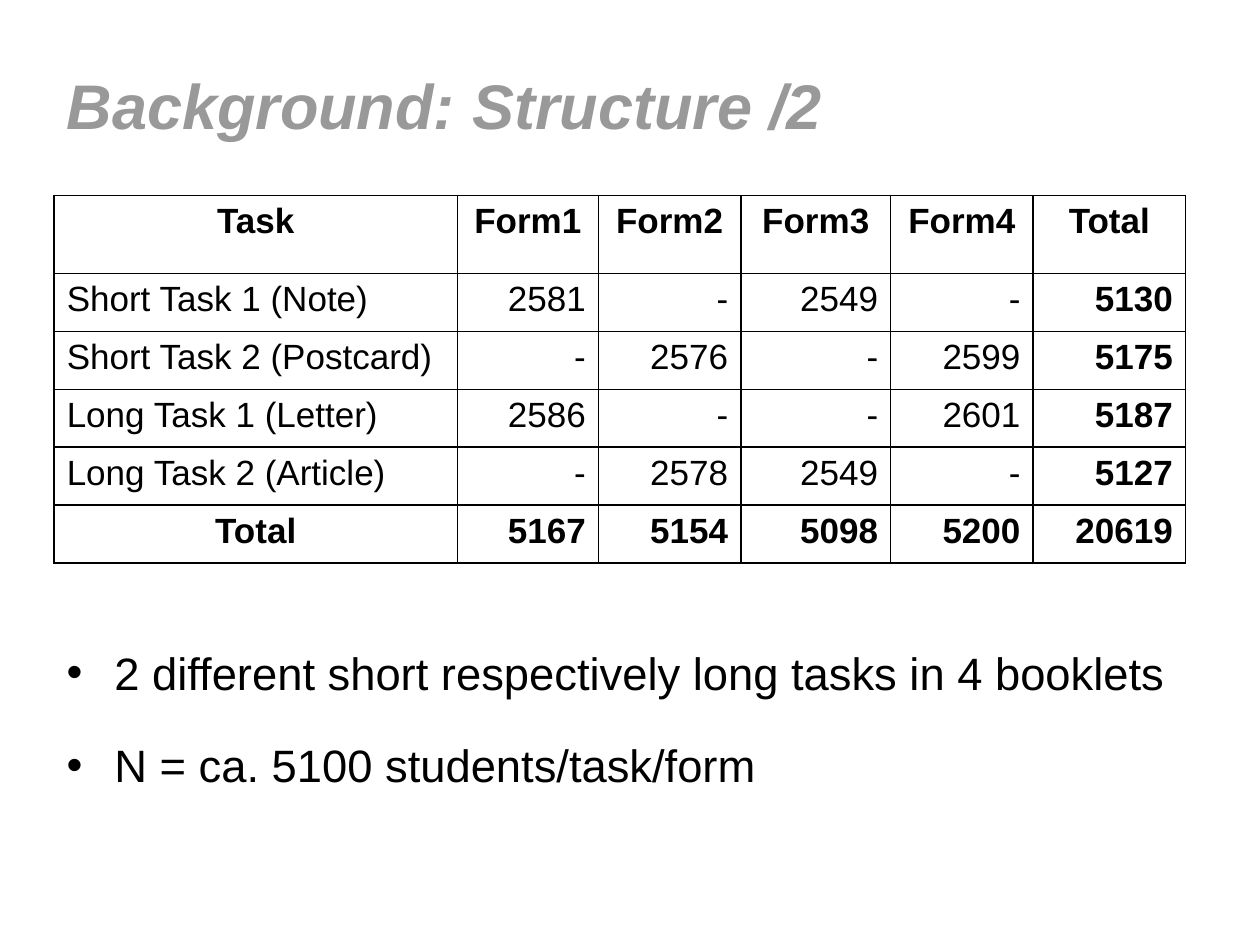
from lxml.etree import SubElement
from pptx import Presentation
from pptx.dml.color import RGBColor
from pptx.enum.text import MSO_ANCHOR, PP_ALIGN
from pptx.oxml.ns import qn
from pptx.util import Inches, Pt

# Content
TITLE = "Background: Structure /2"
TASK_COUNTS = [
    ("Task", "Form1", "Form2", "Form3", "Form4", "Total"),
    ("Short Task 1 (Note)", "2581", "-", "2549", "-", "5130"),
    ("Short Task 2 (Postcard)", "-", "2576", "-", "2599", "5175"),
    ("Long Task 1 (Letter)", "2586", "-", "-", "2601", "5187"),
    ("Long Task 2 (Article)", "-", "2578", "2549", "-", "5127"),
    ("Total", "5167", "5154", "5098", "5200", "20619"),
]
REMARKS = [
    "2 different short respectively long tasks in 4 booklets",
    "N = ca. 5100 students/task/form",
]

# Format
COLORS = {"title": "999999", "text": "000000", "border": "000000"}
FORMATS = {
    "title": {"name": "Arial", "size": Pt(36), "bold": True, "italic": True},
    "remark": {"name": "Arial", "size": Pt(25.9)},
    "cell": {"name": "Arial", "size": Pt(20), "bold": False},
    "strong": {"name": "Arial", "size": Pt(20), "bold": True},
}
LEFT, TEXT_WIDTH = 0.43, 9.29
COLUMN_WIDTHS = [3.2, 1.12, 1.13, 1.19, 1.13, 1.21]
ROW_HEIGHTS = [0.62] + [0.46] * 5
HANGING = Inches(0.38)


def write(paragraph, text, style, color="text"):
    paragraph.text = text
    for attribute, value in FORMATS[style].items():
        setattr(paragraph.font, attribute, value)
    paragraph.font.color.rgb = RGBColor.from_string(COLORS[color])


def add_text_frame(slide, top, height):
    frame = slide.shapes.add_textbox(
        Inches(LEFT), Inches(top), Inches(TEXT_WIDTH), Inches(height)).text_frame
    frame.word_wrap = True
    return frame


def add_borders(cell):
    properties = cell._tc.get_or_add_tcPr()
    for position, side in enumerate(("lnL", "lnR", "lnT", "lnB")):
        line = properties.makeelement(qn(f"a:{side}"), {"w": str(Pt(1))})
        properties.insert(position, line)
        fill = SubElement(line, qn("a:solidFill"))
        SubElement(fill, qn("a:srgbClr"), val=COLORS["border"])


def add_bullet(paragraph):
    properties = paragraph._p.get_or_add_pPr()
    properties.set("marL", str(HANGING))
    properties.set("indent", str(-HANGING))
    SubElement(properties, qn("a:buFont"), typeface="Arial")
    SubElement(properties, qn("a:buChar"), char="•")


def cell_alignment(row, column):
    last_row = len(TASK_COUNTS) - 1
    if row == 0 or (row == last_row and column == 0):
        return PP_ALIGN.CENTER
    return PP_ALIGN.LEFT if column == 0 else PP_ALIGN.RIGHT


def add_task_table(slide):
    rows, columns = len(TASK_COUNTS), len(COLUMN_WIDTHS)
    table = slide.shapes.add_table(
        rows, columns, Inches(LEFT), Inches(1.55),
        Inches(sum(COLUMN_WIDTHS)), Inches(sum(ROW_HEIGHTS))).table
    table.first_row = table.horz_banding = False
    for column, width in zip(table.columns, COLUMN_WIDTHS):
        column.width = Inches(width)
    for row, height in zip(table.rows, ROW_HEIGHTS):
        row.height = Inches(height)
    for r, values in enumerate(TASK_COUNTS):
        for c, value in enumerate(values):
            cell = table.cell(r, c)
            cell.fill.background()
            add_borders(cell)
            strong = r in (0, rows - 1) or c == columns - 1
            paragraph = cell.text_frame.paragraphs[0]
            paragraph.alignment = cell_alignment(r, c)
            write(paragraph, value, "strong" if strong else "cell")


def main():
    deck = Presentation()
    deck.slide_width, deck.slide_height = Inches(10), Inches(7.5)
    slide = deck.slides.add_slide(deck.slide_layouts[6])

    # Title
    heading = add_text_frame(slide, 0.28, 1.1)
    heading.vertical_anchor = MSO_ANCHOR.MIDDLE
    write(heading.paragraphs[0], TITLE, "title", "title")

    # Students per task and form
    add_task_table(slide)

    # Remarks
    remarks = add_text_frame(slide, 4.77, 1.67)
    remarks.margin_top = Inches(0.09)
    for i, remark in enumerate(REMARKS):
        paragraph = remarks.add_paragraph() if i else remarks.paragraphs[0]
        paragraph.line_spacing = 1.6
        if i:
            paragraph.space_before = Pt(3)
        add_bullet(paragraph)
        write(paragraph, remark, "remark")

    deck.save("out.pptx")


if __name__ == "__main__":
    main()
